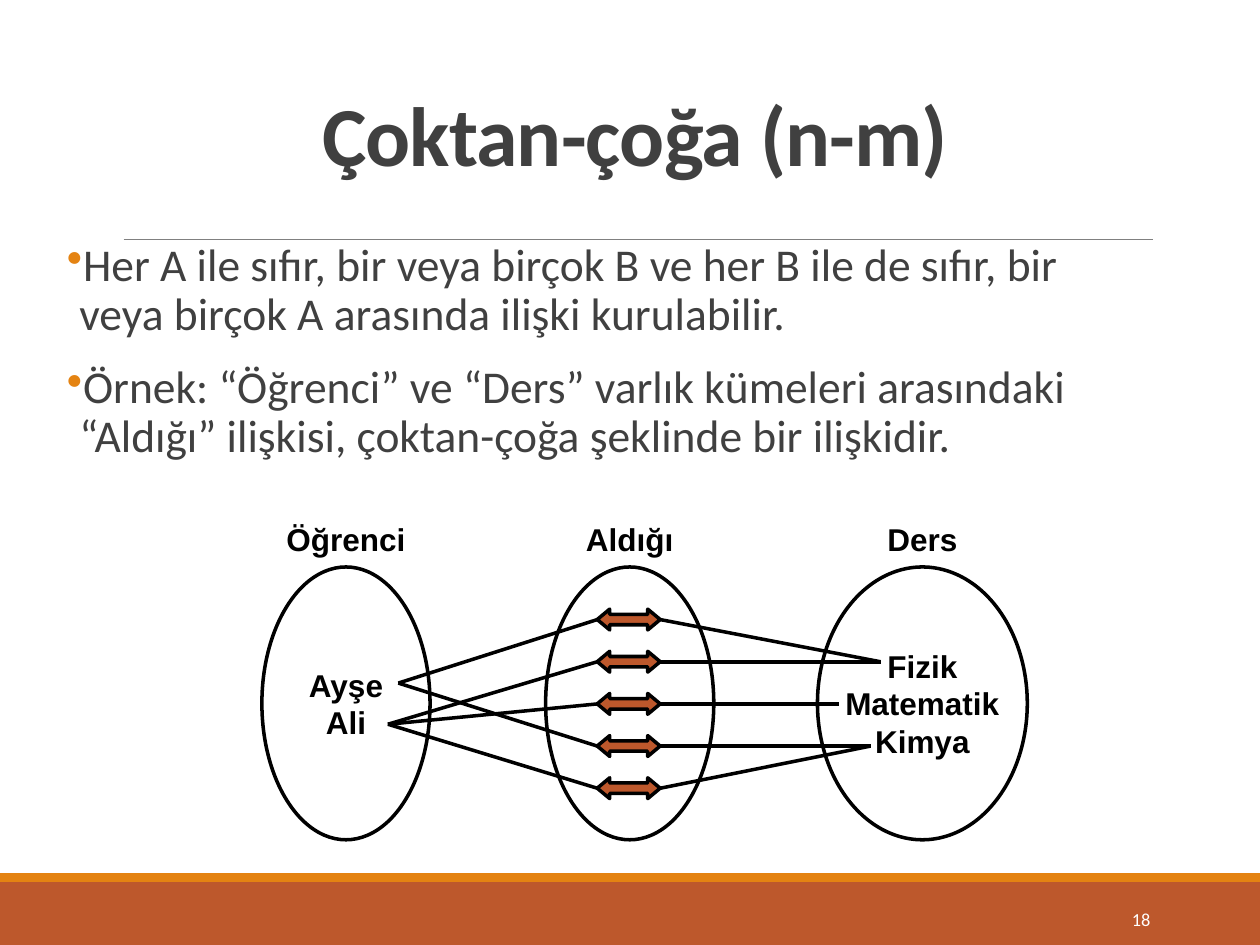
from lxml import etree
from pptx import Presentation
from pptx.dml.color import RGBColor
from pptx.enum.shapes import MSO_CONNECTOR as Link, MSO_SHAPE as Form
from pptx.enum.text import MSO_ANCHOR as Anchor, PP_ALIGN as Align
from pptx.oxml.ns import qn
from pptx.util import Cm, Pt

DARK, RUST, GOLD, BLACK = "404040", "BD582C", "E48312", "000000"


def color(code):
    return RGBColor.from_string(code)


class Page:
    """Style and current slide, with one method per kind of element."""
    label = dict(name="Arial", size=Pt(18), bold=True, color=BLACK)
    title = dict(name="Calibri", size=Pt(48), bold=True, color=DARK)
    body = dict(name="Calibri", size=Pt(26), color=DARK)
    number = dict(name="Calibri", size=Pt(10.5), color="FFFFFF")

    def __init__(self, slide):
        self.slide = slide

    def fill(self, frame, lines, font, frm=None, par=None):
        """Fill a text frame; frm and par hold frame and paragraph formats."""
        for key, val in (frm or {}).items():
            setattr(frame, key, val)
        for i, line in enumerate(lines):
            para = frame.add_paragraph() if i else frame.paragraphs[0]
            for key, val in (par or {}).items():
                setattr(para, key, val)
            run = para.add_run()
            run.text = line
            for key, val in font.items():
                if key == "color":
                    run.font.color.rgb = color(val)
                else:
                    setattr(run.font, key, val)
        return frame.paragraphs

    def text(self, box, lines, font, frm=None, par=None):
        frame = self.slide.shapes.add_textbox(*map(Cm, box)).text_frame
        frame.word_wrap = True
        return self.fill(frame, lines, font, frm, par)

    def shape(self, form, box, fill=None, line=None):
        item = self.slide.shapes.add_shape(form, *map(Cm, box))
        item.shadow.inherit = False
        if fill:
            item.fill.solid()
            item.fill.fore_color.rgb = color(fill)
        else:
            item.fill.background()
        if line:
            item.line.color.rgb = color(line)
            item.line.width = Pt(2)
        else:
            item.line.fill.background()
        return item

    def line(self, start, end, code=BLACK, width=2):
        item = self.slide.shapes.add_connector(
            Link.STRAIGHT, *map(Cm, (*start, *end)))
        item.line.color.rgb = color(code)
        item.line.width = Pt(width)
        etree.SubElement(item._element.spPr, qn("a:effectLst"))

    def bullet(self, para, code):
        """Give a paragraph a coloured dot and a hanging indent."""
        props = para._p.get_or_add_pPr()
        props.set("marL", str(Cm(0.25)))
        props.set("indent", str(-Cm(0.25)))
        tint = etree.SubElement(props, qn("a:buClr"))
        etree.SubElement(tint, qn("a:srgbClr"), val=code)
        etree.SubElement(props, qn("a:buChar"), char="•")


def frame(page):
    """Draw the footer bars, title, rule and page number."""
    page.shape(Form.RECTANGLE, (0, 17.78, 25.4, 1.27), RUST)
    page.shape(Form.RECTANGLE, (0, 17.6, 25.4, 0.18), GOLD)
    page.line((2.49, 4.83), (23.24, 4.83), "808080", 0.5)
    head = page.text((2.11, 1.93, 21.39, 1.9), ["Çoktan-çoğa (n-m)"],
                     page.title, dict(vertical_anchor=Anchor.BOTTOM),
                     dict(alignment=Align.CENTER, line_spacing=0.85))
    head[0].runs[0].font._element.set("spc", "-50")
    page.text((20.7, 18.03, 2.74, 1.02), ["18"], page.number,
              dict(vertical_anchor=Anchor.MIDDLE),
              dict(alignment=Align.RIGHT))


def points(page):
    lines = [
        "Her A ile sıfır, bir veya birçok B ve her B ile de sıfır, bir "
        "veya birçok A arasında ilişki kurulabilir.",
        "Örnek: “Öğrenci” ve “Ders” varlık kümeleri arasındaki "
        "“Aldığı” ilişkisi, çoktan-çoğa şeklinde bir ilişkidir.",
    ]
    paras = page.text((1.35, 4.75, 21.39, 6.99), lines, page.body,
                      dict(margin_left=0, margin_right=0),
                      dict(line_spacing=0.9, space_before=Pt(12),
                           space_after=Pt(2)))
    for para in paras:
        page.bullet(para, GOLD)


def diagram(page):
    sets = [
        ("Öğrenci", 5.28, 3.39, ["Ayşe", "Ali"]),
        ("Aldığı", 11, 3.39, []),
        ("Ders", 16.48, 4.23, ["Fizik", "Matematik", "Kimya"]),
    ]
    mid = dict(alignment=Align.CENTER)
    for name, left, wide, items in sets:
        page.text((left, 10.36, wide, 1.02), [name], page.label, par=mid)
        oval = page.shape(Form.OVAL, (left, 11.43, wide, 5.5), line=BLACK)
        page.fill(oval.text_frame, items, page.label,
                  dict(word_wrap=False, vertical_anchor=Anchor.MIDDLE), mid)

    left, wide, high = 12.04, 1.27, 0.42
    rows = [12.49 + 0.85 * i for i in range(5)]
    # Each member's point, the side of the arrows it meets, and their rows
    links = [
        ((8.03, 13.77), left, (0, 3)),
        ((7.82, 14.6), left, (1, 2, 4)),
        ((17.75, rows[1]), left + wide, (0, 1)),
        ((16.92, rows[2]), left + wide, (2,)),
        ((17.55, rows[3]), left + wide, (3, 4)),
    ]
    for spot, side, picks in links:
        for i in picks:
            page.line((side, rows[i]), spot)
    for y in rows:
        arrow = page.shape(Form.LEFT_RIGHT_ARROW,
                           (left, y - high / 2, wide, high), RUST, BLACK)
        arrow.adjustments[0] = 0.5
        arrow.adjustments[1] = 0.6


def main():
    deck = Presentation()
    deck.slide_width, deck.slide_height = Cm(25.4), Cm(19.05)
    page = Page(deck.slides.add_slide(deck.slide_layouts[6]))
    frame(page)
    points(page)
    diagram(page)
    deck.save("out.pptx")


if __name__ == "__main__":
    main()
